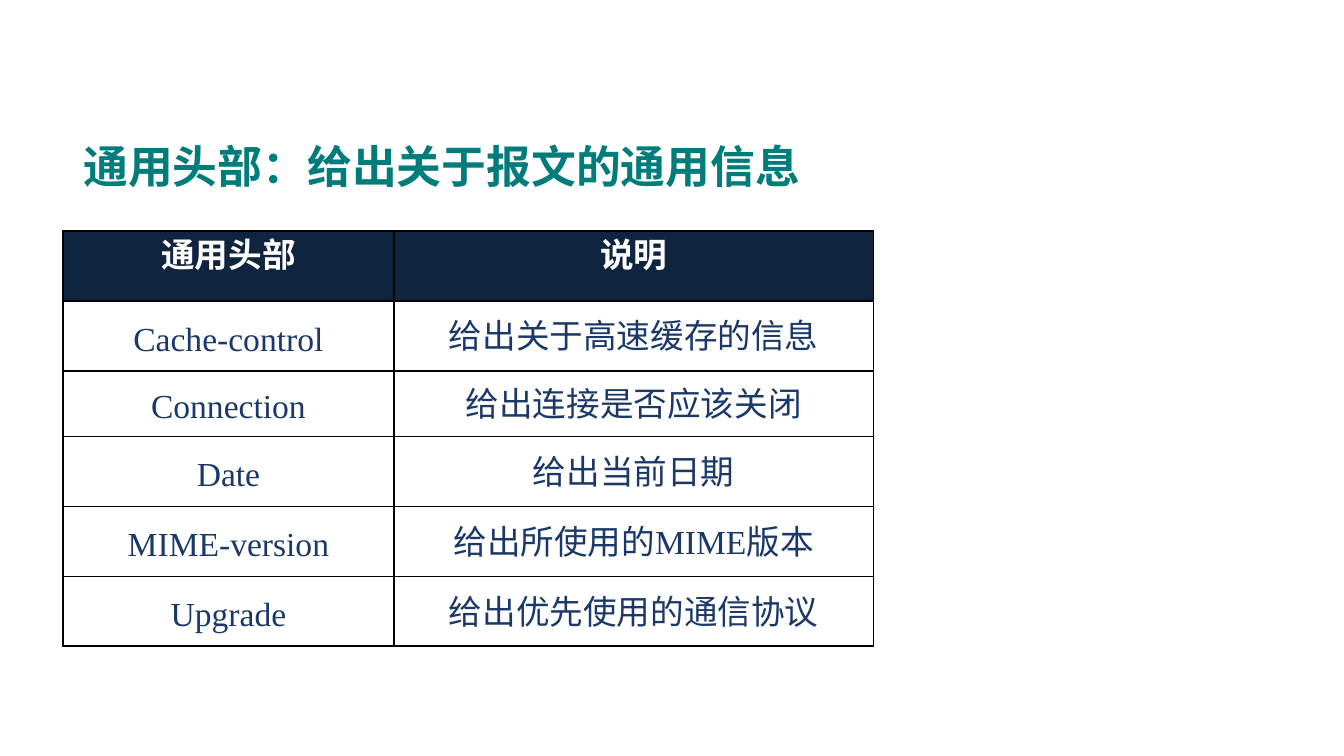
from dataclasses import dataclass

import pptx
import pptx.dml.color
import pptx.enum.text
import pptx.oxml
import pptx.oxml.ns
import pptx.table
import pptx.text.text
import pptx.util

Inches = pptx.util.Inches
Pt = pptx.util.Pt
Align = pptx.enum.text.PP_ALIGN
Anchor = pptx.enum.text.MSO_ANCHOR


@dataclass(frozen=True)
class Theme:
    face: str = "Times New Roman"
    teal: str = "007D7A"
    navy: str = "0F243E"
    blue: str = "1A3868"
    white: str = "FFFFFF"
    black: str = "000000"
    title: int = 24
    body: int = 18
    lead: int = 12
    rule: int = 1


@dataclass(frozen=True)
class Look:
    fill: str
    ink: str
    bold: bool
    drop: int


@dataclass(frozen=True)
class Entry:
    name: str
    note: str
    high: float = 0.52


THEME = Theme()
HEAD = Look(THEME.navy, THEME.white, True, 0)
BODY = Look(THEME.white, THEME.blue, False, THEME.lead)
TITLE = "通用头部：给出关于报文的通用信息"
ROWS = [
    Entry("通用头部", "说明"),
    Entry("Cache-control", "给出关于高速缓存的信息"),
    Entry("Connection", "给出连接是否应该关闭", 0.49),
    Entry("Date", "给出当前日期"),
    Entry("MIME-version", "给出所使用的MIME版本"),
    Entry("Upgrade", "给出优先使用的通信协议"),
]
WIDTHS = (2.46, 3.57)
WIDE = 10
TALL = WIDE * 9 / 16


def style(para: pptx.text.text._Paragraph, size: int, ink: str, bold: bool) -> None:
    font = para.font
    font.name = THEME.face
    font.size = Pt(size)
    font.bold = bold
    font.color.rgb = pptx.dml.color.RGBColor.from_string(ink)


def border(cell: pptx.table._Cell) -> None:
    props = cell._tc.get_or_add_tcPr()
    for spot, side in enumerate(("lnL", "lnR", "lnT", "lnB")):
        line = pptx.oxml.parse_xml(
            f'<a:{side} {pptx.oxml.ns.nsdecls("a")} w="{Pt(THEME.rule)}">'
            f'<a:solidFill><a:srgbClr val="{THEME.black}"/></a:solidFill></a:{side}>'
        )
        props.insert(spot, line)


def write(cell: pptx.table._Cell, text: str, look: Look) -> None:
    cell.text = text
    cell.vertical_anchor = Anchor.MIDDLE
    cell.margin_left = cell.margin_right = Inches(0.07)
    cell.margin_top = Pt(look.drop)
    cell.margin_bottom = 0
    cell.fill.solid()
    cell.fill.fore_color.rgb = pptx.dml.color.RGBColor.from_string(look.fill)
    border(cell)
    para = cell.text_frame.paragraphs[0]
    para.alignment = Align.CENTER
    para.line_spacing = Pt(THEME.lead)
    style(para, THEME.body, look.ink, look.bold)


def main() -> None:
    deck = pptx.Presentation()
    deck.slide_width, deck.slide_height = Inches(WIDE), Inches(TALL)
    slide = deck.slides.add_slide(deck.slide_layouts[5])

    title = slide.shapes.title
    title.left, title.top = Inches(0.52), Inches(0.82)
    title.width, title.height = Inches(8.08), Inches(0.82)
    title.text_frame.text = TITLE
    title.text_frame.vertical_anchor = Anchor.MIDDLE
    para = title.text_frame.paragraphs[0]
    para.alignment = Align.LEFT
    style(para, THEME.title, THEME.teal, True)

    high = sum(entry.high for entry in ROWS)
    table = slide.shapes.add_table(
        len(ROWS), len(WIDTHS), Inches(0.47), Inches(1.72),
        Inches(sum(WIDTHS)), Inches(high),
    ).table
    for col, wide in zip(table.columns, WIDTHS):
        col.width = Inches(wide)
    for index, (row, entry) in enumerate(zip(table.rows, ROWS)):
        row.height = Inches(entry.high)
        for cell, text in zip(row.cells, (entry.name, entry.note)):
            write(cell, text, BODY if index else HEAD)

    deck.save("out.pptx")


if __name__ == "__main__":
    main()
